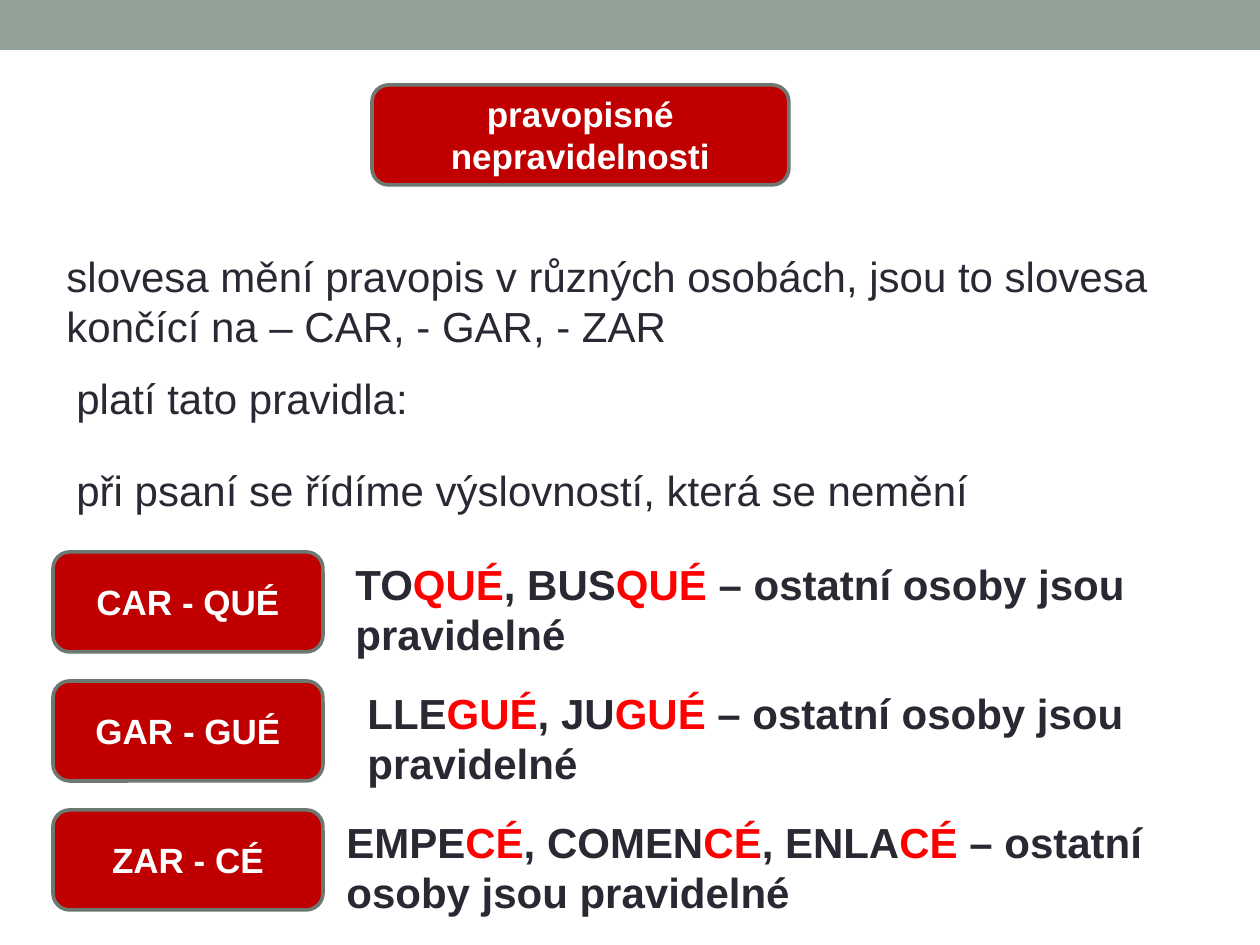
from pptx import Presentation
from pptx.dml.color import RGBColor
from pptx.enum.shapes import MSO_SHAPE
from pptx.enum.text import MSO_ANCHOR, PP_ALIGN
from pptx.util import Emu, Pt

RECTANGLE = MSO_SHAPE.RECTANGLE
ROUNDED = MSO_SHAPE.ROUNDED_RECTANGLE
MIDDLE = MSO_ANCHOR.MIDDLE
CENTER = PP_ALIGN.CENTER
PX = 914400 // 126

THEME = {
    "font": "Arial",
    "band": RGBColor(0x93, 0xA2, 0x99),
    "label": RGBColor(0xC0, 0x00, 0x00),
    "border": RGBColor(0x6D, 0x78, 0x71),
    "label_text": RGBColor(0xFF, 0xFF, 0xFF),
    "text": RGBColor(0x29, 0x29, 0x34),
    "ending": RGBColor(0xFF, 0x00, 0x00),
    "label_size": Pt(20),
    "text_size": Pt(24),
    "border_width": Pt(2.08),
}


def add_label(left, top, width, text):
    shape = slide.shapes.add_shape(
        ROUNDED, left * PX, top * PX, width * PX, 100 * PX)
    shape.shadow.inherit = False
    shape.fill.solid()
    shape.fill.fore_color.rgb = THEME["label"]
    shape.line.color.rgb = THEME["border"]
    shape.line.width = THEME["border_width"]
    frame = shape.text_frame
    frame.word_wrap = True
    frame.vertical_anchor = MIDDLE
    paragraph = frame.paragraphs[0]
    paragraph.text = text
    paragraph.alignment = CENTER
    paragraph.font.name = THEME["font"]
    paragraph.font.size = THEME["label_size"]
    paragraph.font.bold = True
    paragraph.font.color.rgb = THEME["label_text"]


def add_text(left, top, width, lines, bold=False):
    """Add one paragraph per line; parts between bars get the ending colour."""
    height = 63 if len(lines) == 1 else 115
    box = slide.shapes.add_textbox(
        left * PX, top * PX, width * PX, height * PX)
    frame = box.text_frame
    frame.word_wrap = False
    for number, line in enumerate(lines):
        paragraph = frame.add_paragraph() if number else frame.paragraphs[0]
        paragraph.font.name = THEME["font"]
        paragraph.font.size = THEME["text_size"]
        paragraph.font.bold = bold
        for index, part in enumerate(line.split("|")):
            run = paragraph.add_run()
            run.text = part
            run.font.color.rgb = THEME["ending" if index % 2 else "text"]


presentation = Presentation()
presentation.slide_width = Emu(1260 * PX)
presentation.slide_height = Emu(945 * PX)
slide = presentation.slides.add_slide(presentation.slide_layouts[6])

band = slide.shapes.add_shape(RECTANGLE, 0, 0, 1260 * PX, 50 * PX)
band.shadow.inherit = False
band.fill.solid()
band.fill.fore_color.rgb = THEME["band"]
band.line.fill.background()

add_label(372, 85, 417, "pravopisné nepravidelnosti")

add_text(54, 244, 1131, [
    "slovesa mění pravopis v různých osobách, jsou to slovesa",
    "končící na – CAR, - GAR, - ZAR",
])
add_text(64, 366, 360, ["platí tato pravidla:"])
add_text(64, 458, 937, ["při psaní se řídíme výslovností, která se nemění"])

rules = [
    ("CAR - QUÉ", 343, 813,
     ["TO|QUÉ|, BUS|QUÉ| – ostatní osoby jsou", "pravidelné"]),
    ("GAR - GUÉ", 355, 789,
     ["LLE|GUÉ|, JU|GUÉ| – ostatní osoby jsou", "pravidelné"]),
    ("ZAR - CÉ", 334, 829,
     ["EMPE|CÉ|, COMEN|CÉ|, ENLA|CÉ |– ostatní", "osoby jsou pravidelné"]),
]
for row, (label, left, width, examples) in enumerate(rules):
    top = 552 + 129 * row
    add_label(53, top, 270, label)
    add_text(left, top, width, examples, bold=True)

presentation.save("out.pptx")
